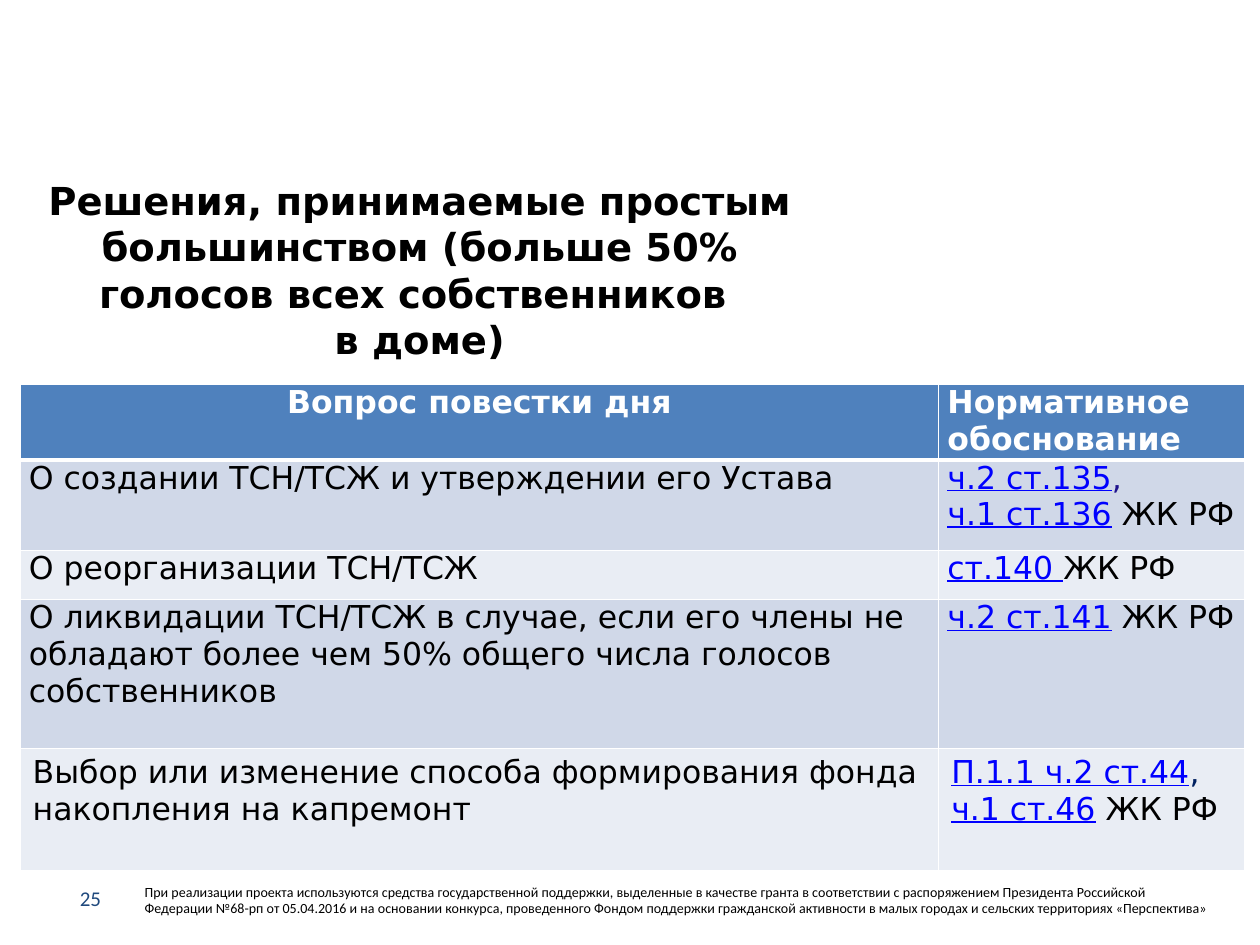
from dataclasses import dataclass

from lxml.etree import SubElement
from pptx import Presentation
from pptx.dml.color import RGBColor as Color
from pptx.enum.text import MSO_ANCHOR as Anchor, PP_ALIGN as Align
from pptx.oxml.ns import qn
from pptx.util import Inches, Pt


@dataclass(frozen=True)
class Theme:
    """Fonts, colours and type sizes of the slide."""
    heading_font: str = "DejaVu Sans"
    small_font: str = "Calibri"
    text: str = "000000"
    white: str = "FFFFFF"
    number: str = "1F497D"
    link: str = "0000FF"
    comma: str = "1E128C"
    last_comma: str = "002060"
    header_fill: str = "4F81BD"
    bands: tuple = ("D0D8E8", "E9EDF4")
    title_size: int = 22
    table_size: int = 18
    number_size: int = 12
    note_size: int = 8


THEME = Theme()
TITLE = "Решения, принимаемые простым большинством (больше 50% голосов всех собственников \vв доме)"
NOTE = (
    "При реализации проекта используются средства государственной поддержки, выделенные "
    "в качестве гранта в соответствии c распоряжением Президента Российской Федерации "
    "№68-рп от 05.04.2016 и на основании конкурса, проведенного Фондом поддержки гражданской "
    "активности в малых городах и сельских территориях «Перспектива»"
)
HEADERS = (("Вопрос повестки дня", Align.CENTER), ("Нормативное обоснование", Align.JUSTIFY))
QUESTIONS = (
    ("О создании ТСН/ТСЖ и утверждении его Устава",
     (("ч.2 ст.135", ", ", THEME.comma), ("ч.1 ст.136", " ЖК РФ", THEME.text))),
    ("О реорганизации ТСН/ТСЖ",
     (("ст.140 ", "ЖК РФ", THEME.text),)),
    ("О ликвидации ТСН/ТСЖ в случае, если его члены не обладают более чем 50% "
     "общего числа голосов собственников",
     (("ч.2 ст.141", " ЖК РФ", THEME.text),)),
    ("Выбор или изменение способа формирования фонда накопления на капремонт",
     (("П.1.1 ч.2 ст.44", ",", THEME.last_comma), ("ч.1 ст.46", " ЖК РФ", THEME.text))),
)
COLUMN_WIDTHS = (7.29, 2.43)
ROW_HEIGHTS = (0.57, 0.72, 0.39, 1.18, 0.97)


def style_font(font, name, size, color, bold=False, underline=False):
    """Apply typeface, size, colour and emphasis to a font."""
    font.name = name
    font.size = Pt(size)
    font.color.rgb = Color.from_string(color)
    font.bold = bold
    font.underline = underline


def add_text(slide, box, text, name, size, color, align=Align.LEFT, anchor=Anchor.TOP, bold=False):
    """Add a wrapped text box with one paragraph."""
    shape = slide.shapes.add_textbox(*map(Inches, box))
    frame = shape.text_frame
    frame.word_wrap = True
    frame.vertical_anchor = anchor
    frame.text = text
    paragraph = frame.paragraphs[0]
    paragraph.alignment = align
    for run in paragraph.runs:
        style_font(run.font, name, size, color, bold)


def set_borders(cell, top, bottom):
    """Draw white borders around a cell, widths in points."""
    properties = cell._tc.get_or_add_tcPr()
    for side, width in (("L", 1), ("R", 1), ("T", top), ("B", bottom)):
        line = SubElement(properties, qn(f"a:ln{side}"), w=str(Pt(width)))
        fill = SubElement(line, qn("a:solidFill"))
        SubElement(fill, qn("a:srgbClr"), val=THEME.white)


def fill_cell(cell, lines, fill, align=Align.LEFT, bold=False):
    """Write lines of (text, colour, underline) runs into a filled cell."""
    cell.fill.solid()
    cell.fill.fore_color.rgb = Color.from_string(fill)
    frame = cell.text_frame
    frame.text = "\n".join("" for _ in lines)
    for paragraph, runs in zip(frame.paragraphs, lines):
        paragraph.alignment = align
        for text, color, underline in runs:
            run = paragraph.add_run()
            run.text = text
            style_font(run.font, THEME.heading_font, THEME.table_size, color, bold, underline)


def add_agenda_table(slide):
    """Add the table of agenda questions and their legal basis."""
    box = (0.16, 3.05, sum(COLUMN_WIDTHS), sum(ROW_HEIGHTS))
    table = slide.shapes.add_table(
        len(ROW_HEIGHTS), len(COLUMN_WIDTHS), *map(Inches, box)).table
    for column, width in zip(table.columns, COLUMN_WIDTHS):
        column.width = Inches(width)
    last = len(QUESTIONS)
    for index, (row, height) in enumerate(zip(table.rows, ROW_HEIGHTS)):
        row.height = Inches(height)
        for cell in row.cells:
            set_borders(cell, 3 if index == 1 else 1, 3 if index == 0 else 1)
            if index < last:
                cell.margin_left = cell.margin_right = Inches(0.07)
                cell.margin_top = cell.margin_bottom = 0
    for column, (text, align) in enumerate(HEADERS):
        fill_cell(table.cell(0, column), [[(text, THEME.white, False)]],
                  THEME.header_fill, align, bold=True)
    for index, (question, basis) in enumerate(QUESTIONS):
        band = THEME.bands[index % 2]
        fill_cell(table.cell(index + 1, 0), [[(question, THEME.text, False)]], band)
        lines = [[(link, THEME.link, True), (rest, color, False)] for link, rest, color in basis]
        fill_cell(table.cell(index + 1, 1), lines, band)


def main():
    """Build and save the slide."""
    presentation = Presentation()
    presentation.slide_width = Inches(10)
    presentation.slide_height = Inches(7.5)
    slide = presentation.slides.add_slide(presentation.slide_layouts[6])
    add_text(slide, (1.05, 6.96, 8.66, 0.37), NOTE,
             THEME.small_font, THEME.note_size, THEME.text)
    add_text(slide, (0.2, 1.7, 6.26, 0.88), TITLE, THEME.heading_font, THEME.title_size,
             THEME.text, Align.CENTER, Anchor.MIDDLE, bold=True)
    add_text(slide, (0.35, 6.93, 0.55, 0.4), "25", THEME.small_font, THEME.number_size,
             THEME.number, Align.RIGHT, Anchor.MIDDLE)
    add_agenda_table(slide)
    presentation.save("out.pptx")


if __name__ == "__main__":
    main()
